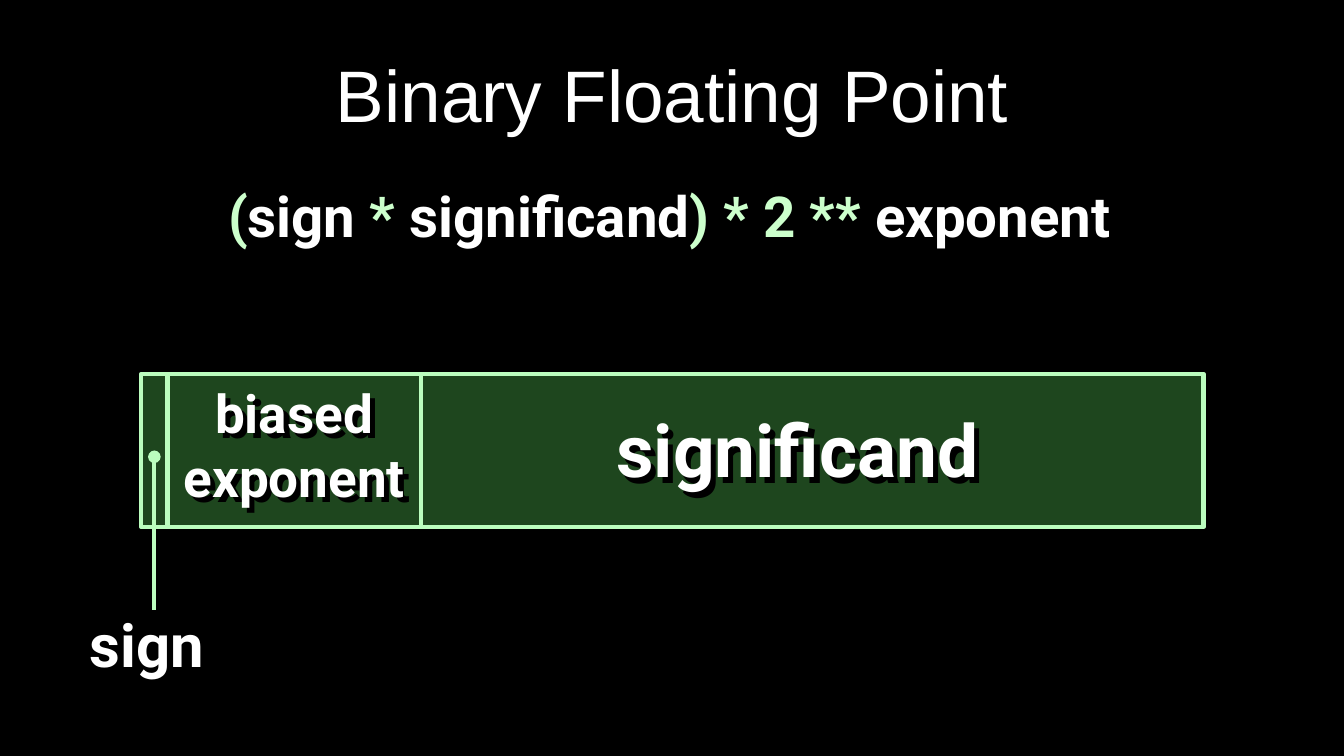
from pptx import Presentation
from pptx.dml.color import RGBColor
from pptx.enum.shapes import MSO_CONNECTOR as Link, MSO_SHAPE as Shape
from pptx.enum.text import MSO_ANCHOR as Anchor, PP_ALIGN as Align
from pptx.oxml.ns import qn
from pptx.util import Cm, Pt
from lxml.etree import SubElement

WHITE, BLACK, MINT, PALE, GREEN = "FFFFFF", "000000", "BBFDBE", "CCFFCC", "1E461E"


def color(code):
    return RGBColor.from_string(code)


class Deck:
    """Holds the style and the current slide, and draws its elements."""

    def __init__(self, width, height):
        self.deck = Presentation()
        self.deck.slide_width, self.deck.slide_height = Cm(width), Cm(height)
        self.slide = self.deck.slides.add_slide(self.deck.slide_layouts[5])
        self.shapes = self.slide.shapes
        fill = self.slide.background.fill
        fill.solid()
        fill.fore_color.rgb = color(BLACK)

    def label(self, frame, parts, size, font="Roboto", bold=True):
        frame.word_wrap = True
        para = frame.paragraphs[0]
        para.alignment = Align.CENTER
        style = {"size": Pt(size), "name": font, "bold": bold}
        for text, code in parts:
            for row, line in enumerate(text.split("\n")):
                if row:
                    para.add_line_break()
                run = para.add_run()
                run.text = line
                for key, value in style.items():
                    setattr(run.font, key, value)
                run.font.color.rgb = color(code)

    def title(self, text, area, size):
        head = self.shapes.title
        for key, value in zip(("left", "top", "width", "height"), area):
            setattr(head, key, Cm(value))
        head.text_frame.vertical_anchor = Anchor.MIDDLE
        self.label(head.text_frame, [(text, WHITE)], size, "Arial", False)

    def text(self, parts, area, size):
        box = self.shapes.add_textbox(*map(Cm, area))
        self.label(box.text_frame, parts, size)

    def shade(self, text, area, size, shift=0.13):
        left, top, width, height = area
        self.text([(text, BLACK)], (left + shift, top + shift, width, height), size)
        self.text([(text, WHITE)], area, size)

    def bar(self, area):
        box = self.shapes.add_shape(Shape.RECTANGLE, *map(Cm, area))
        box.shadow.inherit = False
        box.fill.solid()
        box.fill.fore_color.rgb = color(GREEN)
        self.stroke(box.line)

    def stroke(self, line):
        line.color.rgb = color(MINT)
        line.width = Pt(3)

    def rule(self, x, start, end, dot=False):
        line = self.shapes.add_connector(Link.STRAIGHT, Cm(x), Cm(start), Cm(x), Cm(end))
        self.stroke(line.line)
        props = line._element.spPr
        SubElement(props, qn("a:effectLst"))
        if dot:
            SubElement(props.find(qn("a:ln")), qn("a:tailEnd"), type="oval")


def main():
    deck = Deck(33.87, 19.05)
    left, top, width, height = 3.56, 9.42, 26.77, 3.86
    base = top + height
    deck.bar((left, top, width, height))
    deck.shade("biased\nexponent", (0.53, 9.47, 13.77, 3.5), 37.9)
    deck.shade("significand", (13.21, 10.08, 13.77, 2.5), 52.1)
    deck.title("Binary Floating Point", (1.7, 0.76, 30.48, 3.18), 52.1)
    deck.text([("(", PALE), ("sign", WHITE), (" * ", PALE), ("significand", WHITE),
               (") * 2 ** ", PALE), ("exponent", WHITE)],
              (0.41, 4.45, 32.92, 14.17), 40.3)
    for x in (4.22, 10.62):
        deck.rule(x, base, top)
    deck.rule(3.89, 15.37, 11.51, dot=True)
    deck.text([("sign", WHITE)], (0.41, 15.19, 6.58, 2.08), 42.7)
    deck.deck.save("out.pptx")


if __name__ == "__main__":
    main()
